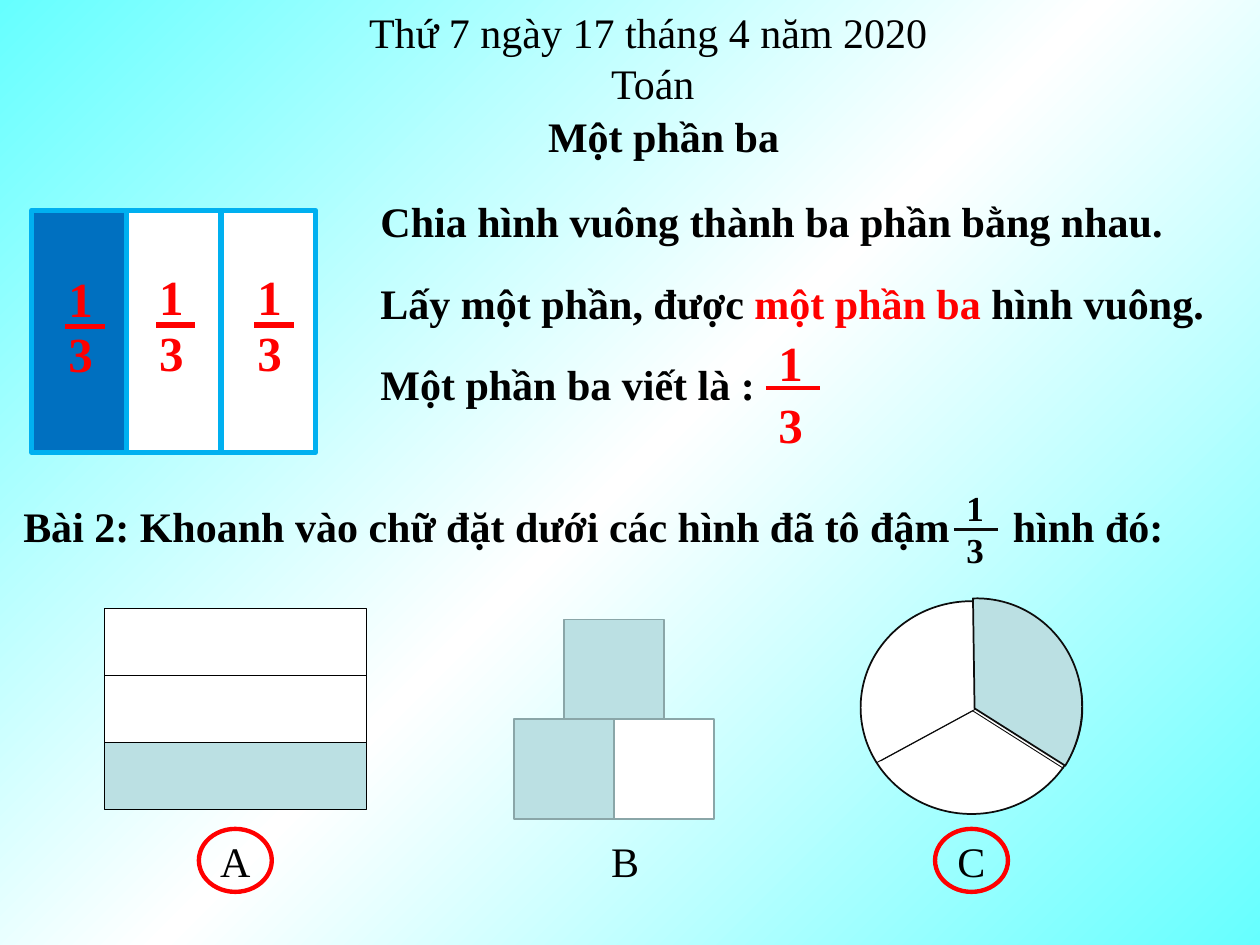
from copy import deepcopy
from lxml.etree import SubElement
from pptx import Presentation
from pptx.dml.color import RGBColor
from pptx.enum.shapes import MSO_CONNECTOR, MSO_SHAPE
from pptx.enum.text import MSO_ANCHOR, MSO_AUTO_SIZE
from pptx.oxml.ns import qn
from pptx.util import Cm, Pt

HUES = {
    "aqua": "66FFFF", "white": "FFFFFF", "black": "000000", "ink": "0D0D0D",
    "red": "FF0000", "sky": "00B0F0", "blue": "0070C0", "pale": "BBE0E3",
    "grey": "8AA6A8",
}


def rgb(hue):
    return RGBColor.from_string(HUES[hue])


def paint(slide):
    """Fill the background with a diagonal three-stop gradient."""
    fill = slide.background.fill
    fill.gradient()
    fill.gradient_angle = 315
    first = fill.gradient_stops[0]._gs
    first.addnext(deepcopy(first))
    for i, hue in enumerate(("aqua", "white", "aqua")):
        stop = fill.gradient_stops[i]
        stop.color.rgb = rgb(hue)
        stop.position = i / 2


def style(run, hue, size, bold):
    font = run.font
    font.name, font.size, font.bold = "Times New Roman", Pt(size), bold
    font.color.rgb = rgb(hue)


def text(shapes, words, x, y, w, h=1.27, hue="black", size=24, bold=True, wrap=True):
    box = shapes.add_textbox(Cm(x), Cm(y), Cm(w), Cm(h))
    frame = box.text_frame
    frame.word_wrap = wrap
    frame.auto_size = MSO_AUTO_SIZE.SHAPE_TO_FIT_TEXT
    frame.text = words
    for para in frame.paragraphs:
        for run in para.runs:
            style(run, hue, size, bold)
    return frame


def shape(shapes, kind, x, y, w, h, fill, edge, width=1):
    item = shapes.add_shape(kind, Cm(x), Cm(y), Cm(w), Cm(h))
    item.shadow.inherit = False
    if fill:
        item.fill.solid()
        item.fill.fore_color.rgb = rgb(fill)
    else:
        item.fill.background()
    item.line.color.rgb = rgb(edge)
    item.line.width = Pt(width)
    return item


def line(shapes, start, end, hue, width):
    ends = [Cm(v) for v in (*start, *end)]
    item = shapes.add_connector(MSO_CONNECTOR.STRAIGHT, *ends)
    item.line.color.rgb = rgb(hue)
    item.line.width = Pt(width)
    SubElement(item._element.spPr, qn("a:effectLst"))


def third(shapes, x, y, bar, width, shift, rise, drop):
    """Draw a red 1/3 whose bar starts at x, y."""
    line(shapes, (x, y), (x + bar, y), "red", width)
    for digit, top in (("1", y - rise), ("3", y - drop)):
        text(shapes, digit, x - shift, top, 1.4, 1.45, "red", 28)


def heads(shapes):
    text(shapes, "Toán", 12.07, 1.04, 2.21, bold=False, wrap=False)
    text(shapes, "Thứ 7 ngày 17 tháng 4 năm 2020", 7.19, 0, 11.86, bold=False, wrap=False)
    text(shapes, "Một phần ba", 10.8, 2.11, 5.21, wrap=False)


def lesson(shapes):
    left = 7.42
    text(shapes, "Chia hình vuông thành ba phần bằng nhau.", left, 3.81, 16.94)
    frame = text(shapes, "Lấy một phần, được ", left, 5.46, 17.9)
    for words, hue in (("một phần ba ", "red"), ("hình vuông.", "black")):
        run = frame.paragraphs[0].add_run()
        run.text = words
        style(run, hue, 24, True)
    frame = text(shapes, "Một phần ba viết là :", left, 6.78, 15.04, 1.93)
    frame.auto_size = MSO_AUTO_SIZE.NONE
    frame.vertical_anchor = MSO_ANCHOR.MIDDLE
    third(shapes, 15.44, 7.82, 1.09, 2.25, 0, 1.24, 0)


def square(shapes):
    wide = 5.72 / 3
    for i, fill in ((2, "white"), (1, "white"), (0, "blue")):
        shape(shapes, MSO_SHAPE.RECTANGLE, 0.64 + i * wide, 4.24, wide, 4.88, fill, "sky", 3)
    for x, y in ((1.32, 6.58), (3.15, 6.55), (5.13, 6.55)):
        third(shapes.add_group_shape().shapes, x, y, 0.79, 3, 0.19, 1.3, 0.18)


def task(shapes):
    frame = text(shapes, "Bài 2: Khoanh vào chữ đặt dưới các hình đã tô đậm\thình đó:", 0, 9.96, 24.13)
    frame.margin_left = Cm(0.47)
    tabs = SubElement(frame.paragraphs[0]._p.get_or_add_pPr(), qn("a:tabLst"))
    SubElement(tabs, qn("a:tab"), pos=str(Cm(19.95)), algn="l")
    group = shapes.add_group_shape().shapes
    text(group, "1\n3", 19.23, 9.68, 0.86, 1.96, size=20, wrap=False)
    line(group, (19.23, 10.67), (20.12, 10.67), "ink", 1.5)


def bars(shapes):
    for i, fill in enumerate(("white", "white", "pale")):
        shape(shapes, MSO_SHAPE.RECTANGLE, 2.11, 12.27 + i * 1.35, 5.28, 1.35, fill, "black")


def blocks(shapes):
    side = 2.01
    for col, row, fill in ((0.5, 0, "pale"), (1, 1, "white"), (0, 1, "pale")):
        x, y = 10.37 + col * side, 12.49 + row * side
        shape(shapes, MSO_SHAPE.RECTANGLE, x, y, side, side, fill, "grey")


def disc(shapes):
    shape(shapes, MSO_SHAPE.FLOWCHART_CONNECTOR, 17.35, 12.12, 4.47, 4.29, "white", "ink")
    hub = (19.61, 14.33)
    line(shapes, hub, (21.44, 15.49), "ink", 0.5)
    line(shapes, (19.71, 14.27), (17.68, 15.37), "ink", 0.5)
    wedge = shape(shapes, MSO_SHAPE.PIE, 17.42, 12.12, 4.45, 4.32, "pale", "ink")
    wedge.rotation = 110.3
    for i, angle in enumerate((158.86, 282.02)):
        wedge.adjustments[i] = angle * 0.6
    line(shapes, hub, (17.75, 15.34), "ink", 0.5)


def marks(shapes):
    """Write the answer letters and ring the right ones."""
    top = 16.71
    for mark, x in (("A", 4.19), ("B", 12.07), ("C", 19.05)):
        text(shapes, mark, x, top, 1.12, bold=False)
    for x in (4.01, 18.85):
        shape(shapes, MSO_SHAPE.OVAL, x, top, 1.47, 1.27, None, "red", 2.5)


def main():
    deck = Presentation()
    deck.slide_width, deck.slide_height = Cm(25.4), Cm(19.05)
    slide = deck.slides.add_slide(deck.slide_layouts[6])
    paint(slide)
    shapes = slide.shapes
    for part in (heads, lesson, square, task):
        part(shapes)
    for part in (bars, blocks, disc):
        part(shapes.add_group_shape().shapes)
    marks(shapes)
    deck.save("out.pptx")


if __name__ == "__main__":
    main()
